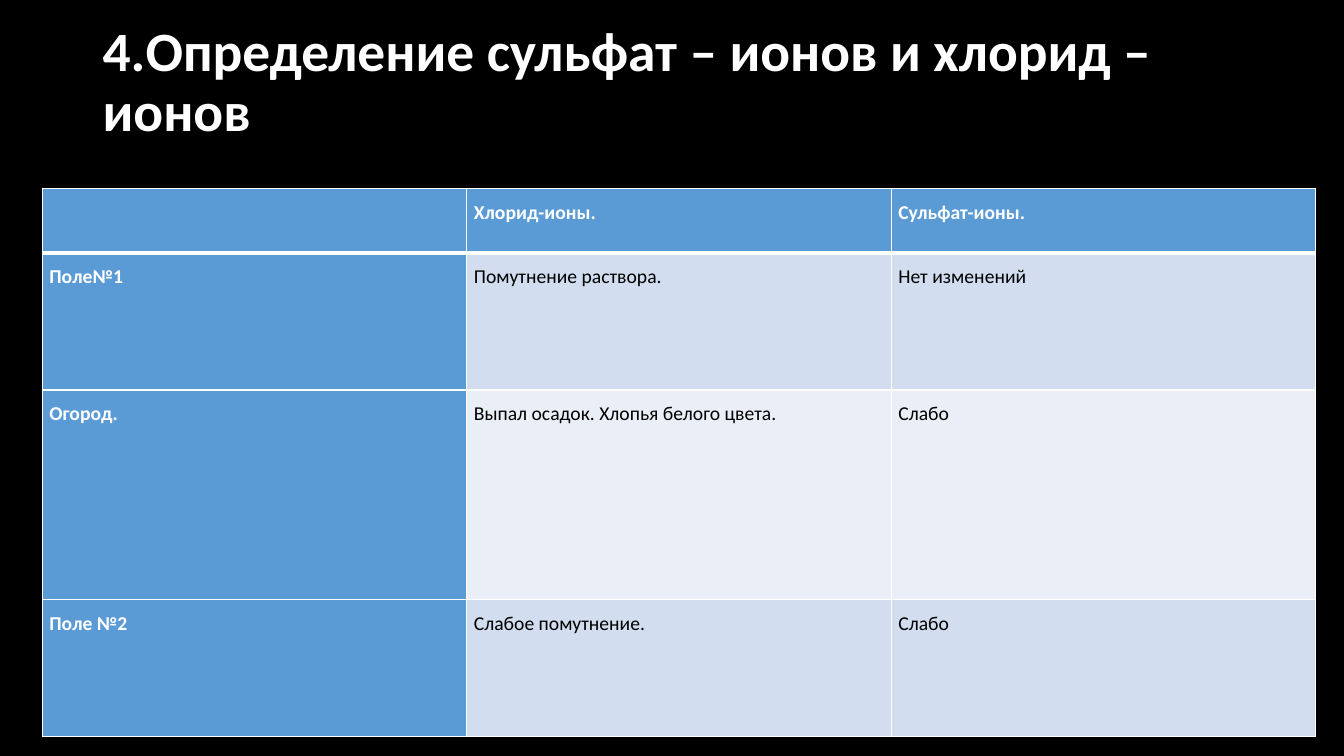
import pptx
import pptx.dml.color
import pptx.enum.text
import pptx.oxml.ns
import pptx.util
import lxml.etree

Inches = pptx.util.Inches
Pt = pptx.util.Pt

WHITE, BLACK, BLUE = "FFFFFF", "000000", "5B9BD5"
BANDS = ["D2DEEF", "EAEFF7"]

RESULTS = [
    ["", "Хлорид-ионы.", "Сульфат-ионы."],
    ["Поле№1", "Помутнение раствора.", "Нет изменений"],
    ["Огород.", "Выпал осадок. Хлопья белого цвета.", "Слабо"],
    ["Поле №2", "Слабое помутнение.", "Слабо"],
]
ROW_HEIGHTS = [0.64, 1.36, 2.08, 1.36]


def rgb(value):
    return pptx.dml.color.RGBColor.from_string(value)


class Deck:
    font = "Calibri"

    def __init__(self, width, height):
        self.prs = pptx.Presentation()
        self.prs.slide_width = Inches(width)
        self.prs.slide_height = Inches(height)

    def slide(self, background):
        self.s = self.prs.slides.add_slide(self.prs.slide_layouts[6])
        fill = self.s.background.fill
        fill.solid()
        fill.fore_color.rgb = rgb(background)

    def run(self, p, text, size, color, bold):
        r = p.add_run()
        r.text = text
        r.font.name = self.font
        r.font.size = Pt(size)
        r.font.bold = bold
        r.font.color.rgb = rgb(color)

    def title(self, text, left, top, width, height):
        sp = self.s.shapes.add_textbox(Inches(left), Inches(top), Inches(width), Inches(height))
        tf = sp.text_frame
        tf.word_wrap = True
        tf.vertical_anchor = pptx.enum.text.MSO_ANCHOR.MIDDLE
        tf.margin_bottom = Inches(0.65)
        p = tf.paragraphs[0]
        p.line_spacing = 0.9
        self.run(p, text, 39.6, WHITE, True)

    def border(self, cell, side, width):
        qn = pptx.oxml.ns.qn
        tcPr = cell._tc.get_or_add_tcPr()
        ln = lxml.etree.SubElement(tcPr, qn("a:ln" + side), w=str(Pt(width)))
        fill = lxml.etree.SubElement(ln, qn("a:solidFill"))
        lxml.etree.SubElement(fill, qn("a:srgbClr"), val=WHITE)

    def cell(self, cell, text, row, col):
        heading = row == 0 or col == 0
        widths = {"L": 1, "R": 1, "T": 3 if row == 1 else 1, "B": 3 if row == 0 else 1}
        for side, width in widths.items():
            self.border(cell, side, width)
        cell.fill.solid()
        cell.fill.fore_color.rgb = rgb(BLUE if heading else BANDS[(row - 1) % 2])
        cell.margin_left = cell.margin_right = Inches(0.07)
        cell.margin_top = cell.margin_bottom = 0
        if text:
            p = cell.text_frame.paragraphs[0]
            p.alignment = pptx.enum.text.PP_ALIGN.JUSTIFY
            p.line_spacing = 1.5
            self.run(p, text, 14, WHITE if heading else BLACK, heading)

    def table(self, rows, heights, left, top, col_width):
        cols = len(rows[0])
        table = self.s.shapes.add_table(
            len(rows), cols, Inches(left), Inches(top),
            Inches(col_width * cols), Inches(sum(heights))).table
        for column in table.columns:
            column.width = Inches(col_width)
        for i, (texts, height) in enumerate(zip(rows, heights)):
            table.rows[i].height = Inches(height)
            for j, text in enumerate(texts):
                self.cell(table.cell(i, j), text, i, j)


def main():
    deck = Deck(13.33, 7.5)
    deck.slide(BLACK)
    deck.title("4.Определение сульфат – ионов и хлорид – ионов", 0.92, 0.4, 11.5, 1.45)
    deck.table(RESULTS, ROW_HEIGHTS, 0.42, 1.87, 4.21)
    deck.prs.save("out.pptx")


if __name__ == "__main__":
    main()
